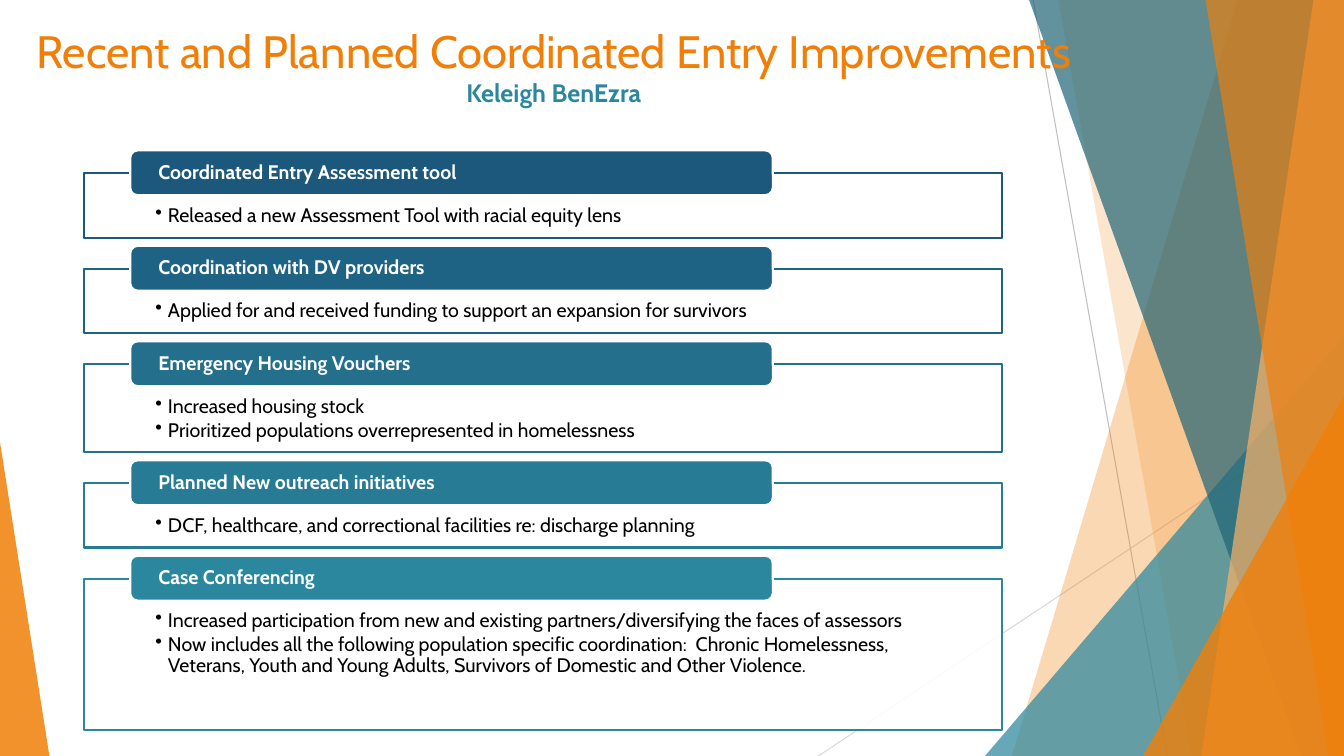
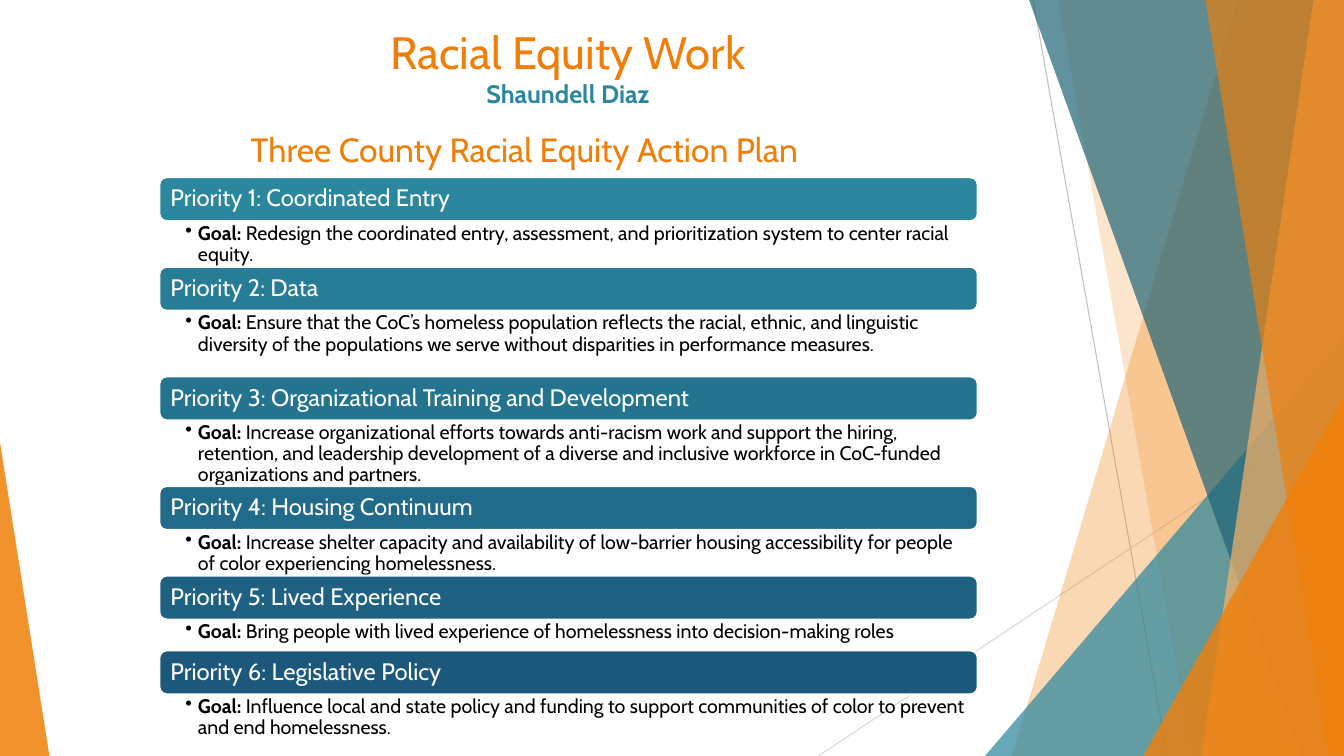
import pptx
import pptx.dml.color
import pptx.enum.shapes
import pptx.enum.text
import pptx.oxml.ns
import pptx.util
import lxml.etree

Pt = pptx.util.Pt
qn = pptx.oxml.ns.qn
SHAPE = pptx.enum.shapes.MSO_SHAPE
ALIGN = pptx.enum.text.PP_ALIGN
ANCHOR = pptx.enum.text.MSO_ANCHOR
WIDTH, HEIGHT = 960, 540
ORANGE, TEAL, NAVY = "F07F09", "2B879D", "1B587C"
WHITE, BLACK = "FFFFFF", "000000"


def rgb(code):
    return pptx.dml.color.RGBColor.from_string(code)


def shades(start, end, count):
    pairs = list(zip(bytes.fromhex(start), bytes.fromhex(end)))
    return [
        "".join(f"{int(a + (b - a) * step / (count - 1)):02X}" for a, b in pairs)
        for step in range(count)
    ]


class Deck:
    font = "Cabin"

    def __init__(self):
        self.presentation = pptx.Presentation()
        self.presentation.slide_width = Pt(WIDTH)
        self.presentation.slide_height = Pt(HEIGHT)
        self.slide = None

    def new_slide(self):
        self.slide = self.presentation.slides.add_slide(self.presentation.slide_layouts[6])
        self.ray((738, 0), (833.8, HEIGHT), "BFBFBF")
        self.ray((WIDTH, 290.2), (584.6, HEIGHT), "D9D9D9")
        self.panel(884.2, 722.9, ORANGE, 30)
        self.panel(756, 851.8, ORANGE, 20)
        self.corner(703.6, 239.8, 256.4, 1, TEAL, 72)
        self.panel(735.1, 929.5, "206576", 70)
        self.panel(938.2, 858.2, "F9B268", 70)
        self.panel(861.1, 949, ORANGE, 65)
        self.corner(816.5, 283, 143.5, 1, ORANGE, 80)
        self.corner(0, 316, 35.3, 0, ORANGE, 85)

    def paint(self, shape, fill, opacity=100, line=None):
        shape.shadow.inherit = False
        shape.fill.solid()
        shape.fill.fore_color.rgb = rgb(fill)
        if opacity < 100:
            color = shape.element.spPr.find(qn("a:solidFill"))[0]
            lxml.etree.SubElement(color, qn("a:alpha"), val=str(opacity * 1000))
        if line:
            shape.line.color.rgb = rgb(line)
            shape.line.width = Pt(1.5)
        else:
            shape.line.fill.background()

    def ray(self, start, end, color):
        ray = self.slide.shapes.add_connector(
            pptx.enum.shapes.MSO_CONNECTOR.STRAIGHT, *map(Pt, start + end))
        ray.line.color.rgb = rgb(color)
        ray.line.width = Pt(0.75)
        lxml.etree.SubElement(ray.element.spPr, qn("a:effectLst"))

    def panel(self, top_left, bottom_left, color, opacity):
        outline = self.slide.shapes.build_freeform(Pt(top_left), 0)
        corners = [(WIDTH, 0), (WIDTH, HEIGHT), (bottom_left, HEIGHT)]
        outline.add_line_segments([(Pt(x), Pt(y)) for x, y in corners], close=True)
        self.paint(outline.convert_to_shape(), color, opacity)

    def corner(self, left, top, width, tip, color, opacity):
        triangle = self.slide.shapes.add_shape(
            SHAPE.ISOSCELES_TRIANGLE, Pt(left), Pt(top), Pt(width), Pt(HEIGHT - top))
        triangle.adjustments[0] = tip
        self.paint(triangle, color, opacity)

    def frame(self, shape, insets=(7.2, 3.6, 7.2, 3.6), anchor=ANCHOR.TOP):
        frame = shape.text_frame
        frame.word_wrap = True
        frame.vertical_anchor = anchor
        (frame.margin_left, frame.margin_top,
         frame.margin_right, frame.margin_bottom) = map(Pt, insets)
        return frame

    def style(self, run, size, color, bold=False):
        run.font.name = self.font
        run.font.size = Pt(size)
        run.font.bold = bold
        run.font.color.rgb = rgb(color)

    def textbox(self, left, top, width, height):
        return self.slide.shapes.add_textbox(Pt(left), Pt(top), Pt(width), Pt(height))

    def title(self, heading, presenter, left, top, width):
        paragraph = self.frame(self.textbox(left, top, width, 69)).paragraphs[0]
        paragraph.text = f"{heading}\v{presenter}"
        paragraph.alignment = ALIGN.CENTER
        self.style(paragraph.runs[0], 32.4, ORANGE)
        self.style(paragraph.runs[1], 18, TEAL, True)

    def subtitle(self, heading, left, top, width):
        frame = self.frame(self.textbox(left, top, width, 29))
        frame.text = heading
        self.style(frame.paragraphs[0].runs[0], 24, ORANGE)

    def bar(self, label, left, top, width, height, fill, size, inset, bold=False):
        bar = self.slide.shapes.add_shape(
            SHAPE.ROUNDED_RECTANGLE, Pt(left), Pt(top), Pt(width), Pt(height))
        self.paint(bar, fill, line=WHITE)
        frame = self.frame(bar, (inset, 0, inset, 0), ANCHOR.MIDDLE)
        frame.text = label
        frame.paragraphs[0].alignment = ALIGN.LEFT
        frame.paragraphs[0].line_spacing = 0.9
        self.style(frame.paragraphs[0].runs[0], size, WHITE, bold)

    def bullets(self, frame, items, lead=""):
        for index, item in enumerate(items):
            paragraph = frame.add_paragraph() if index else frame.paragraphs[0]
            paragraph.text = lead or item
            if lead:
                paragraph.add_run().text = item
            properties = paragraph._p.get_or_add_pPr()
            properties.set("marL", str(Pt(9)))
            properties.set("indent", str(Pt(-9)))
            lxml.etree.SubElement(properties, qn("a:buChar"), char="•")
            paragraph.alignment = ALIGN.LEFT
            paragraph.line_spacing = 0.9
            paragraph.space_after = Pt(2)
            for run in paragraph.runs:
                self.style(run, 14, BLACK, run.text == lead)

    def card(self, label, items, top, height, color):
        card = self.slide.shapes.add_shape(
            SHAPE.RECTANGLE, Pt(60), Pt(top), Pt(656), Pt(height))
        self.paint(card, WHITE, 90, color)
        self.bullets(self.frame(card, (51, 23, 51, 8)), items)
        self.bar(label, 93, top - 16.3, 459, 32, color, 14, 18.6, True)

    def priority(self, label, goal, top, bar_height, goal_height, color):
        left, width = 113.8, 584.6
        self.bar(label, left, top, width, bar_height, color, 17, 6.4)
        goal_box = self.textbox(left, top + bar_height, width, goal_height)
        self.bullets(self.frame(goal_box, (18.6, 1.6, 8, 1.6)), [goal], "Goal: ")


IMPROVEMENTS = [
    ("Coordinated Entry Assessment tool", 46,
     ["Released a new Assessment Tool with racial equity lens"]),
    ("Coordination with DV providers", 46,
     ["Applied for and received funding to support an expansion for survivors"]),
    ("Emergency Housing Vouchers", 62.8,
     ["Increased housing stock",
      "Prioritized populations overrepresented in homelessness"]),
    ("Planned New outreach initiatives", 46,
     ["DCF, healthcare, and correctional facilities re: discharge planning"]),
    ("Case Conferencing", 108,
     ["Increased participation from new and existing partners/diversifying the faces of assessors",
      "Now includes all the following population specific coordination:  Chronic Homelessness, "
      "Veterans, Youth and Young Adults, Survivors of Domestic and Other Violence."]),
]

PRIORITIES = [
    ("Coordinated Entry", 32.6,
     "Redesign the coordinated entry, assessment, and prioritization system to center racial "
     "equity."),
    ("Data", 46.9,
     "Ensure that the CoC’s homeless population reflects the racial, ethnic, and linguistic "
     "diversity of the populations we serve without disparities in performance measures."),
    ("Organizational Training and Development", 46.9,
     "Increase organizational efforts towards anti-racism work and support the hiring, "
     "retention, and leadership development of a diverse and inclusive workforce in CoC-funded "
     "organizations and partners."),
    ("Housing Continuum", 32.6,
     "Increase shelter capacity and availability of low-barrier housing accessibility for people "
     "of color experiencing homelessness."),
    ("Lived Experience", 22,
     "Bring people with lived experience of homelessness into decision-making roles"),
    ("Legislative Policy", 32.6,
     "Influence local and state policy and funding to support communities of color to prevent "
     "and end homelessness."),
]


def improvements_slide(deck):
    deck.new_slide()
    deck.title("Recent and Planned Coordinated Entry Improvements", "Keleigh BenEzra", 0, 13, 791)
    top, gap = 123.7, 22.2
    colors = shades(NAVY, TEAL, len(IMPROVEMENTS))
    for (label, height, items), color in zip(IMPROVEMENTS, colors):
        deck.card(label, items, top, height, color)
        top += height + gap


def equity_slide(deck):
    deck.new_slide()
    deck.title("Racial Equity Work", "Shaundell Diaz", 216.7, 13.7, 378)
    deck.subtitle("Three County Racial Equity Action Plan", 172, 88.6, 467)
    top, bar_height = 126.6, 31.4
    colors = shades(TEAL, NAVY, len(PRIORITIES))
    for number, ((name, height, goal), color) in enumerate(zip(PRIORITIES, colors), 1):
        deck.priority(f"Priority {number}: {name}", goal, top, bar_height, height, color)
        top += bar_height + height


def main():
    deck = Deck()
    improvements_slide(deck)
    equity_slide(deck)
    deck.presentation.save("out.pptx")


if __name__ == "__main__":
    main()
